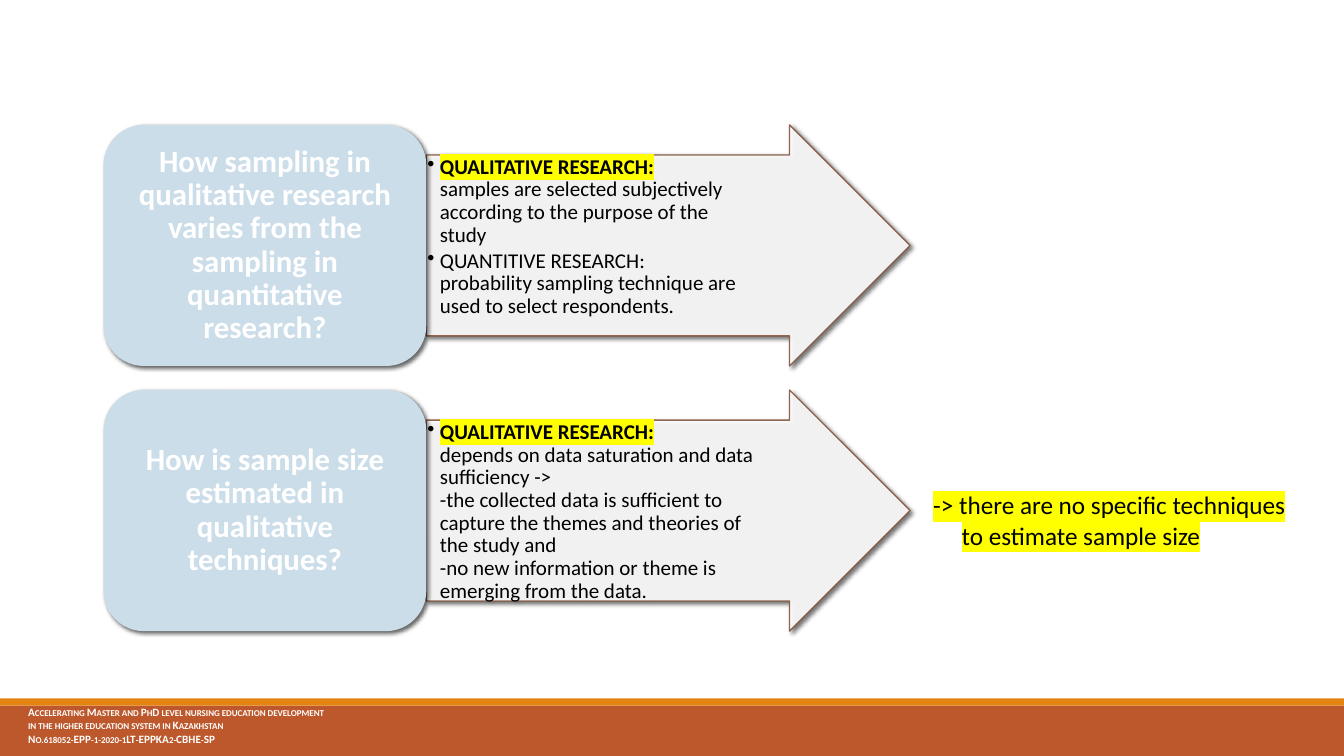
from lxml.etree import SubElement
from pptx import Presentation
from pptx.dml.color import RGBColor
from pptx.enum.shapes import MSO_SHAPE as Preset
from pptx.enum.text import MSO_ANCHOR as Anchor, PP_ALIGN as Align
from pptx.oxml.ns import qn
from pptx.util import Pt

FONT = "Calibri"
YELLOW = "FFFF00"
ROW_TOP, ROW_PITCH, ROW_HEIGHT = 89.2, 189.4, 172.2
CARD_LEFT, CARD_WIDTH, ARROW_WIDTH = 74, 230.5, 345.6

QUALITATIVE = ("QUALITATIVE RESEARCH:", True)
ROWS = [
    (
        ["How sampling in qualitative research varies from the sampling in quantitative",
         "research?"],
        [
            [QUALITATIVE,
             ("samples are selected subjectively according to the purpose of the study", False)],
            [("QUANTITIVE RESEARCH:", False),
             ("probability sampling technique are used to select respondents.", False)],
        ],
    ),
    (
        ["How is sample size estimated in qualitative techniques?"],
        [
            [QUALITATIVE,
             ("depends on data saturation and data sufficiency ->", False),
             ("-the collected data is sufficient to capture the themes and theories "
              "of the study and", False),
             ("-no new information or theme is emerging from the data.", False)],
        ],
    ),
]
NOTE = ["-> there are no specific techniques", "to estimate sample size"]
FOOTER = [
    "Accelerating Master and PhD level nursing education development",
    "in the higher education system in Kazakhstan",
    "No.618052-EPP-1-2020-1LT-EPPKA2-CBHE-SP",
]


def color(value):
    return RGBColor.from_string(value)


def add_alpha(fill_element, percent):
    SubElement(fill_element[0], qn("a:alpha"), val=str(percent * 1000))


def add_shadow(shape):
    effects = shape._element.spPr.find(qn("a:effectLst"))
    shadow = SubElement(effects, qn("a:outerShdw"), blurRad=str(Pt(3)), dist=str(Pt(2)),
                        dir="2700000", algn="ctr", rotWithShape="0")
    black = SubElement(shadow, qn("a:srgbClr"), val="000000")
    SubElement(black, qn("a:alpha"), val="60000")


def add_panel(slide, preset, left, top, width, height, fill):
    shape = slide.shapes.add_shape(preset, Pt(left), Pt(top), Pt(width), Pt(height))
    shape.shadow.inherit = False
    shape.fill.solid()
    shape.fill.fore_color.rgb = color(fill)
    shape.line.fill.background()
    return shape


def add_text_box(slide, left, top, width, height):
    box = slide.shapes.add_textbox(Pt(left), Pt(top), Pt(width), Pt(height))
    box.text_frame.word_wrap = True
    return box.text_frame


def next_paragraph(frame, index):
    return frame.add_paragraph() if index else frame.paragraphs[0]


def add_run(paragraph, text, size, ink, bold=False, highlight=None):
    run = paragraph.add_run()
    run.text = text
    run.font.size = Pt(size)
    run.font.bold = bold
    run.font.color.rgb = color(ink)
    if highlight:
        marker = SubElement(run._r.get_or_add_rPr(), qn("a:highlight"))
        SubElement(marker, qn("a:srgbClr"), val=highlight)
    run.font.name = FONT
    return run


def add_lines(paragraph, lines, size, ink, bold=False, highlight=None):
    for index, line in enumerate(lines):
        if index:
            paragraph.add_line_break()
        add_run(paragraph, line, size, ink, bold, highlight)


def set_hanging(paragraph, indent):
    properties = paragraph._p.get_or_add_pPr()
    properties.set("marL", str(Pt(indent)))
    properties.set("indent", str(-Pt(indent)))
    return properties


def add_arrow(slide, top, points):
    arrow = add_panel(slide, Preset.RIGHT_ARROW, CARD_LEFT + CARD_WIDTH, top,
                      ARROW_WIDTH, ROW_HEIGHT, "FFFFFF")
    arrow.adjustments[0] = 0.75
    arrow.adjustments[1] = 0.5
    arrow.line.color.rgb = color("865640")
    arrow.line.width = Pt(1)
    properties = arrow._element.spPr
    add_alpha(properties.find(qn("a:solidFill")), 90)
    add_alpha(properties.find(qn("a:ln")).find(qn("a:solidFill")), 90)
    add_shadow(arrow)
    frame = arrow.text_frame
    frame.word_wrap = True
    frame.vertical_anchor = Anchor.TOP
    frame.margin_left = frame.margin_top = frame.margin_bottom = Pt(0.75)
    frame.margin_right = Pt(44)
    for index, lines in enumerate(points):
        paragraph = next_paragraph(frame, index)
        SubElement(set_hanging(paragraph, 9), qn("a:buChar"), char="•")
        paragraph.alignment = Align.LEFT
        paragraph.line_spacing = 0.9
        paragraph.space_after = Pt(2.25)
        for position, (text, marked) in enumerate(lines):
            if position:
                paragraph.add_line_break()
            add_run(paragraph, text, 15, "000000", marked, YELLOW if marked else None)
        for line_break in paragraph._p.findall(qn("a:br")):
            SubElement(line_break, qn("a:rPr"), sz="1500")


def add_card(slide, top, question):
    card = add_panel(slide, Preset.ROUNDED_RECTANGLE, CARD_LEFT, top,
                     CARD_WIDTH, ROW_HEIGHT, "CCDDEA")
    add_shadow(card)
    card.text_frame.word_wrap = True
    card.text_frame.vertical_anchor = Anchor.MIDDLE
    paragraph = card.text_frame.paragraphs[0]
    paragraph.alignment = Align.CENTER
    paragraph.line_spacing = 0.9
    add_lines(paragraph, question, 22, "FFFFFF", True)


def add_note(slide):
    frame = add_text_box(slide, 659.5, 346.3, 275, 51)
    paragraph = frame.paragraphs[0]
    set_hanging(paragraph, 20.3)
    add_lines(paragraph, NOTE, 18, "000000", highlight=YELLOW)


def add_footer(slide):
    add_panel(slide, Preset.RECTANGLE, 0, 504, 960, 36, "BD582C")
    add_panel(slide, Preset.RECTANGLE, 0, 498.8, 960, 5.2, "E48312")
    frame = add_text_box(slide, 13, 500.2, 330.5, 38)
    for index, line in enumerate(FOOTER):
        run = add_run(next_paragraph(frame, index), line, 8, "FFFFFF", True)
        run._r.get_or_add_rPr().set("cap", "small")


def main():
    presentation = Presentation()
    presentation.slide_width = Pt(960)
    presentation.slide_height = Pt(540)
    slide = presentation.slides.add_slide(presentation.slide_layouts[6])
    add_footer(slide)
    for index, (question, points) in enumerate(ROWS):
        top = ROW_TOP + index * ROW_PITCH
        add_arrow(slide, top, points)
        add_card(slide, top, question)
    add_note(slide)
    presentation.save("out.pptx")


if __name__ == "__main__":
    main()
